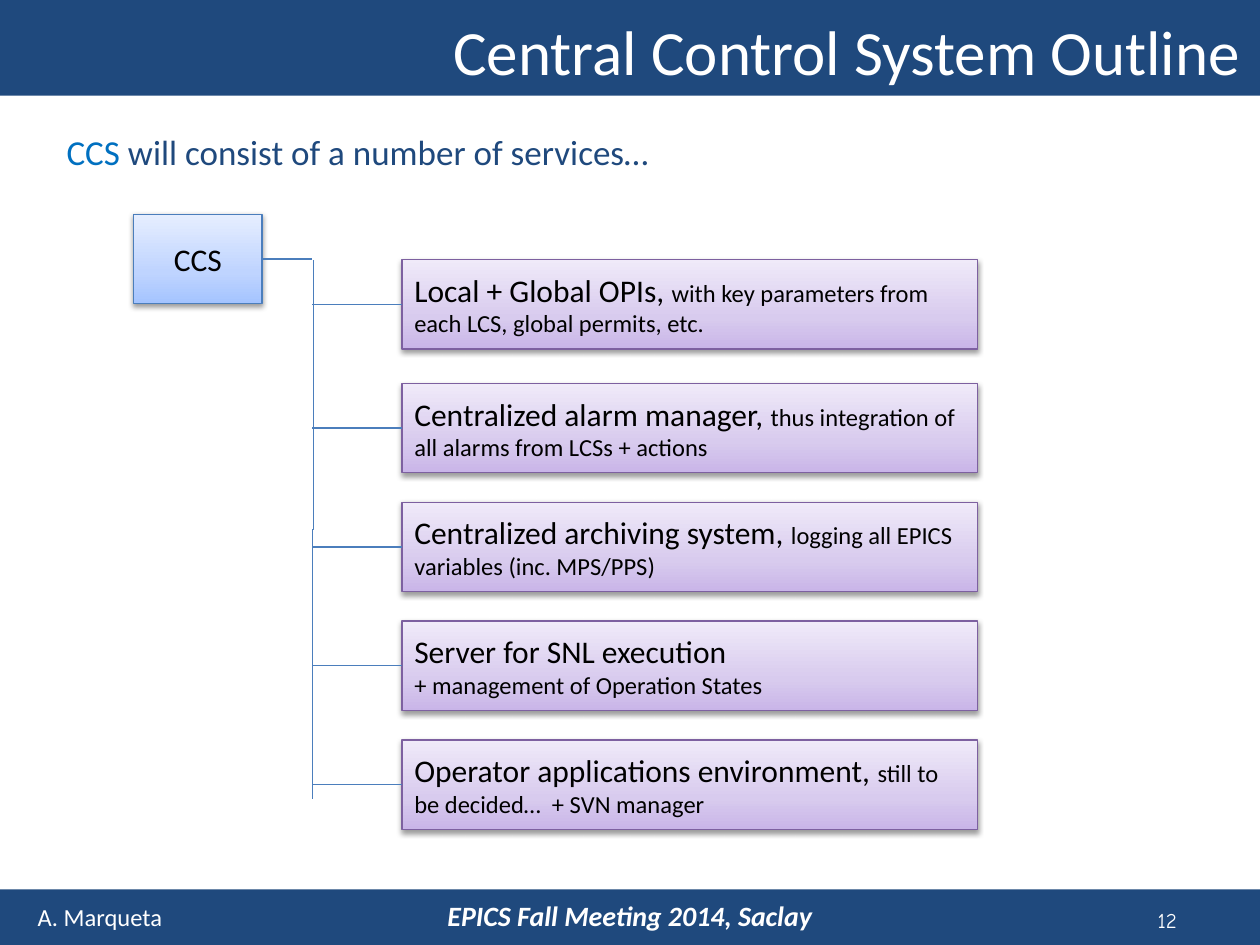
from dataclasses import dataclass
from lxml.etree import SubElement
from pptx import Presentation
from pptx.dml.color import RGBColor
from pptx.enum.shapes import MSO_CONNECTOR, MSO_SHAPE
from pptx.enum.text import MSO_ANCHOR, PP_ALIGN
from pptx.oxml.ns import qn
from pptx.util import Inches, Pt

COLUMNS, ROWS = 100, 75  # square cells on a 10 by 7.5 inch slide
CELL = Inches(10) / COLUMNS


@dataclass(frozen=True)
class Theme:
    font: str = "Calibri"
    number_font: str = "Comic Neue"
    navy: str = "1F497D"
    accent: str = "0070C0"
    white: str = "FFFFFF"
    black: str = "000000"
    wire: str = "4B7EBC"
    violet_edge: str = "7D60A0"
    blue_stops: tuple = ((0, "A4C4FF"), (35, "BFD4FF"), (100, "E6EEFF"))
    violet_stops: tuple = ((0, "C9B5E8"), (35, "D8CBEE"), (100, "F0EAF9"))
    title: int = 36
    lead: int = 20
    event: int = 16
    heading: int = 18
    detail: int = 14
    number: int = 12


THEME = Theme()


@dataclass(frozen=True)
class Box:
    """A rectangle in grid cells."""
    left: float
    top: float
    width: float
    height: float

    @property
    def middle(self):
        return self.top + self.height / 2

    def lengths(self):
        return [cells(n) for n in (self.left, self.top, self.width, self.height)]


def cells(count):
    return round(count * CELL)


def rgb(value):
    return RGBColor.from_string(value)


def span(text, size, color=THEME.black, **extra):
    return text, {"name": THEME.font, "size": Pt(size), "color": color, **extra}


def write(frame, paragraphs, align=PP_ALIGN.LEFT):
    for index, spans in enumerate(paragraphs):
        para = frame.paragraphs[0] if index == 0 else frame.add_paragraph()
        para.alignment = align
        for text, style in spans:
            run = para.add_run()
            run.text = text
            for name, value in style.items():
                if name == "color":
                    run.font.color.rgb = rgb(value)
                else:
                    setattr(run.font, name, value)


def add_label(page, box, spans, align=PP_ALIGN.LEFT, wrap=False):
    frame = page.shapes.add_textbox(*box.lengths()).text_frame
    frame.word_wrap = wrap
    write(frame, [spans], align)


def add_band(page, box):
    band = page.shapes.add_shape(MSO_SHAPE.RECTANGLE, *box.lengths())
    band.shadow.inherit = False
    band.fill.solid()
    band.fill.fore_color.rgb = rgb(THEME.navy)
    band.line.fill.background()


def add_card(page, box, stops, edge, paragraphs, align=PP_ALIGN.LEFT):
    card = page.shapes.add_shape(MSO_SHAPE.RECTANGLE, *box.lengths())
    card.line.color.rgb = rgb(edge)
    card.line.width = Pt(0.75)
    # Three-stop gradient, darkest at the bottom
    card.fill.gradient()
    card.fill.gradient_angle = 90
    properties = card.element.spPr
    stop_list = properties.find(qn("a:gradFill")).find(qn("a:gsLst"))
    for old in list(stop_list):
        stop_list.remove(old)
    for position, color in stops:
        stop = SubElement(stop_list, qn("a:gs"), pos=str(position * 1000))
        SubElement(stop, qn("a:srgbClr"), val=color)
    # Soft shadow straight below
    card.shadow.inherit = False
    shadow = SubElement(properties.find(qn("a:effectLst")), qn("a:outerShdw"),
                        blurRad=str(Pt(3.1)), dist=str(Pt(1.6)),
                        dir="5400000", rotWithShape="0")
    tint = SubElement(shadow, qn("a:srgbClr"), val=THEME.black)
    SubElement(tint, qn("a:alpha"), val="38000")
    frame = card.text_frame
    frame.word_wrap = True
    frame.vertical_anchor = MSO_ANCHOR.MIDDLE
    write(frame, paragraphs, align)
    return card


def add_wire(page, start, end, kind=MSO_CONNECTOR.STRAIGHT):
    wire = page.shapes.add_connector(kind, *[cells(n) for n in (*start, *end)])
    wire.line.color.rgb = rgb(THEME.wire)
    wire.line.width = Pt(0.75)
    SubElement(wire.element.spPr, qn("a:effectLst"))
    return wire


def add_header(page, box):
    add_band(page, box)
    add_label(page, Box(box.left + 35, box.top + 0.5, box.width - 35, 7.1),
              [span("Central Control System Outline", THEME.title, THEME.white)])


def add_footer(page, box):
    add_band(page, box)
    add_label(page, Box(box.left + 2, box.top + 0.5, 12, 3.4),
              [span("A. Marqueta", THEME.detail, THEME.white)])
    add_label(page, Box(box.left + 24, box.top + 0.2, box.width - 48, 3.7),
              [span("EPICS Fall Meeting 2014, Saclay", THEME.event, THEME.white,
                    bold=True, italic=True)], PP_ALIGN.CENTER, wrap=True)
    add_label(page, Box(box.left + 90.9, box.top + 0.9, 4.7, 3),
              [span("12", THEME.number, THEME.white, name=THEME.number_font)])


def add_lead(page, box):
    add_label(page, box, [span("CCS", THEME.lead, THEME.accent),
                          span(" will consist of a number of services…",
                               THEME.lead, THEME.navy)],
              PP_ALIGN.CENTER, wrap=True)


def add_service_tree(page, box, services):
    card_height, card_left, trunk = 7.1, box.left + 21.3, box.left + 14.2
    # Root with its stub to the trunk
    root_box = Box(box.left, box.top, 10.2, card_height)
    root = add_card(page, root_box, THEME.blue_stops, THEME.wire,
                    [[span("CCS", THEME.heading)]], PP_ALIGN.CENTER)
    stub = add_wire(page, (root_box.left + root_box.width, root_box.middle),
                    (trunk, root_box.middle))
    stub.begin_connect(root, 3)
    # Trunk: an elbow turned a quarter, so that it runs downwards
    length, jog = 42.8, 0.1
    center_x, center_y = trunk + jog / 2, root_box.middle + 0.1 + length / 2
    elbow = add_wire(page, (center_x - length / 2, center_y - jog / 2),
                     (center_x + length / 2, center_y + jog / 2),
                     MSO_CONNECTOR.ELBOW)
    elbow.element.spPr.find(qn("a:xfrm")).set("rot", "5400000")
    # Service cards: even steps, with a little more after the first
    for index, paragraphs in enumerate(services):
        top = box.top + 3.6 + 9.43 * index + (0.4 if index else 0)
        card_box = Box(card_left, top, box.width - 21.3, card_height)
        card = add_card(page, card_box, THEME.violet_stops,
                        THEME.violet_edge, paragraphs)
        branch = add_wire(page, (trunk, card_box.middle),
                          (card_left, card_box.middle))
        branch.end_connect(card, 1)


def service(heading, detail, same_line=True):
    first, second = span(heading, THEME.heading), span(detail, THEME.detail)
    return [[first, second]] if same_line else [[first], [second]]


SERVICES = [
    service("Local + Global OPIs, ",
            "with key parameters from each LCS, global permits, etc."),
    service("Centralized alarm manager, ",
            "thus integration of all alarms from LCSs + actions"),
    service("Centralized archiving system, ",
            "logging all EPICS variables (inc. MPS/PPS)"),
    service("Server for SNL execution",
            "+ management of Operation States", same_line=False),
    service("Operator applications environment, ",
            "still to be decided…  + SVN manager"),
]


def main():
    deck = Presentation()
    deck.slide_width, deck.slide_height = cells(COLUMNS), cells(ROWS)
    page = deck.slides.add_slide(deck.slide_layouts[6])
    add_footer(page, Box(0, 70.6, COLUMNS, 4.4))
    add_header(page, Box(0, 0, COLUMNS, 7.6))
    add_lead(page, Box(2, 9.9, 52.8, 4.7))
    add_service_tree(page, Box(10.6, 17, 67, 48.8), SERVICES)
    deck.save("out.pptx")


if __name__ == "__main__":
    main()
